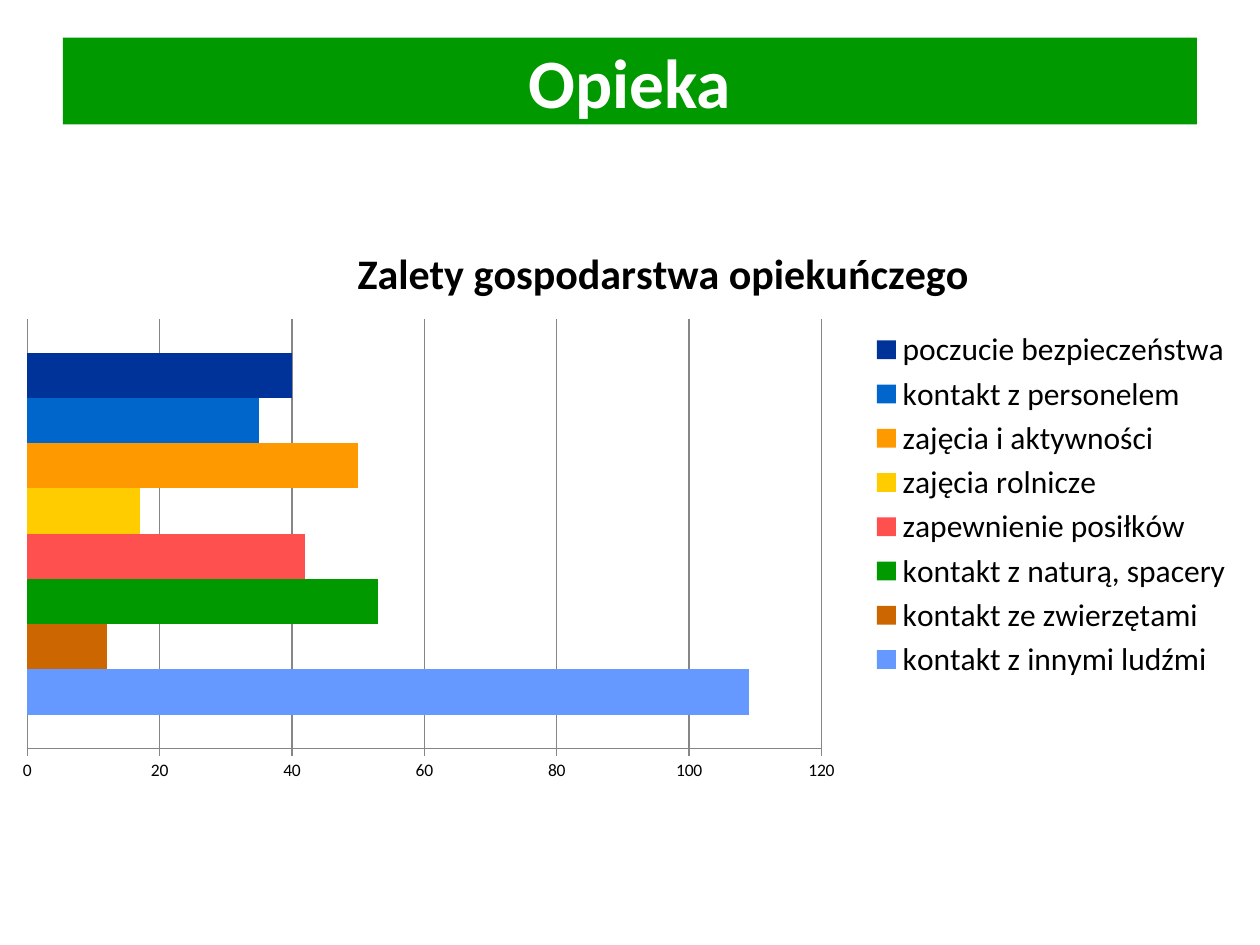
from dataclasses import dataclass

from lxml.etree import SubElement
from pptx import Presentation
from pptx.chart.data import CategoryChartData
from pptx.dml.color import RGBColor
from pptx.enum.chart import XL_CHART_TYPE as ChartType
from pptx.enum.chart import XL_LEGEND_POSITION as LegendPosition
from pptx.enum.chart import XL_TICK_MARK as TickMark
from pptx.enum.shapes import MSO_SHAPE as ShapeType
from pptx.enum.text import MSO_ANCHOR as Anchor
from pptx.enum.text import PP_ALIGN as Align
from pptx.oxml.ns import qn
from pptx.util import Cm, Pt

FONT = "Calibri"
GREEN = "009900"
WHITE = "FFFFFF"
BLACK = "000000"
GREY = "868686"


@dataclass
class Advantage:
    name: str
    count: int
    color: str


ADVANTAGES = [
    Advantage("kontakt z innymi ludźmi", 109, "6699FF"),
    Advantage("kontakt ze zwierzętami", 12, "CC6600"),
    Advantage("kontakt z naturą, spacery", 53, GREEN),
    Advantage("zapewnienie posiłków", 42, "FF5050"),
    Advantage("zajęcia rolnicze", 17, "FFCC00"),
    Advantage("zajęcia i aktywności", 50, "FF9900"),
    Advantage("kontakt z personelem", 35, "0066CC"),
    Advantage("poczucie bezpieczeństwa", 40, "003399"),
]


def paint(color_format, color: str) -> None:
    color_format.rgb = RGBColor.from_string(color)


def fill_solid(fill, color: str) -> None:
    fill.solid()
    paint(fill.fore_color, color)


def style_font(font, size: float, color: str = BLACK, bold: bool = False) -> None:
    font.name = FONT
    font.size = Pt(size)
    font.bold = bold
    paint(font.color, color)


def write(frame, text: str, *, size: float, color: str = BLACK,
          bold: bool = False, align: Align = Align.CENTER) -> None:
    para = frame.paragraphs[0]
    para.alignment = align
    span = para.add_run()
    span.text = text
    style_font(span.font, size, color, bold)


def place(element, index: int, **fractions: float) -> None:
    for old in element.findall(qn("c:layout")):
        element.remove(old)
    layout = SubElement(element, qn("c:layout"))
    element.insert(index, layout)
    manual = SubElement(layout, qn("c:manualLayout"))
    if element.tag == qn("c:plotArea"):
        SubElement(manual, qn("c:layoutTarget")).set("val", "inner")
    for side in ("x", "y"):
        SubElement(manual, qn(f"c:{side}Mode")).set("val", "edge")
    for name, value in fractions.items():
        SubElement(manual, qn(f"c:{name}")).set("val", str(value))


def add_banner(page, text: str) -> None:
    box = page.shapes.add_shape(
        ShapeType.RECTANGLE, Cm(1.27), Cm(0.76), Cm(22.86), Cm(1.75))
    box.shadow.inherit = False
    fill_solid(box.fill, GREEN)
    box.line.fill.background()
    box.text_frame.vertical_anchor = Anchor.MIDDLE
    write(box.text_frame, text, size=39.6, color=WHITE, bold=True)


def add_advantages_chart(page, title: str, advantages: list[Advantage]) -> None:
    data = CategoryChartData()
    data.categories = ["1"]
    for advantage in advantages:
        data.add_series(advantage.name, [advantage.count])
    chart = page.shapes.add_chart(
        ChartType.BAR_CLUSTERED, Cm(0.05), Cm(4.32), Cm(25.02), Cm(11.71), data).chart
    style_font(chart.font, 10)

    plot = chart.plots[0]
    plot.gap_width = 150
    plot.overlap = 0
    plot.vary_by_categories = False
    for series, advantage in zip(plot.series, advantages):
        fill_solid(series.format.fill, advantage.color)
        series.invert_if_negative = False

    chart.category_axis.visible = False
    axis = chart.value_axis
    axis.minimum_scale, axis.maximum_scale, axis.major_unit = 0, 120, 20
    axis.major_tick_mark = TickMark.CROSS
    axis.minor_tick_mark = TickMark.NONE
    axis.has_major_gridlines = True
    for line in (axis.format.line, axis.major_gridlines.format.line):
        line.width = Pt(0.75)
        paint(line.color, GREY)

    chart.has_title = True
    write(chart.chart_title.text_frame, title, size=24, bold=True)
    chart.has_legend = True
    chart.legend.position = LegendPosition.RIGHT
    chart.legend.include_in_layout = False
    style_font(chart.legend.font, 18)

    plot_area = chart.category_axis._element.getparent()
    place(plot_area, 0, x=0.02, y=0.18, w=0.64, h=0.74)
    place(chart.chart_title._element, 1, x=0.28, y=0.04)
    place(chart.legend._element, 1, x=0.7, y=0.19, w=0.29, h=0.62)


def main() -> None:
    deck = Presentation()
    deck.slide_width, deck.slide_height = Cm(25.4), Cm(19.05)
    page = deck.slides.add_slide(deck.slide_layouts[6])
    fill_solid(page.background.fill, WHITE)
    add_banner(page, "Opieka")
    add_advantages_chart(page, "Zalety gospodarstwa opiekuńczego", ADVANTAGES)
    deck.save("out.pptx")


if __name__ == "__main__":
    main()
